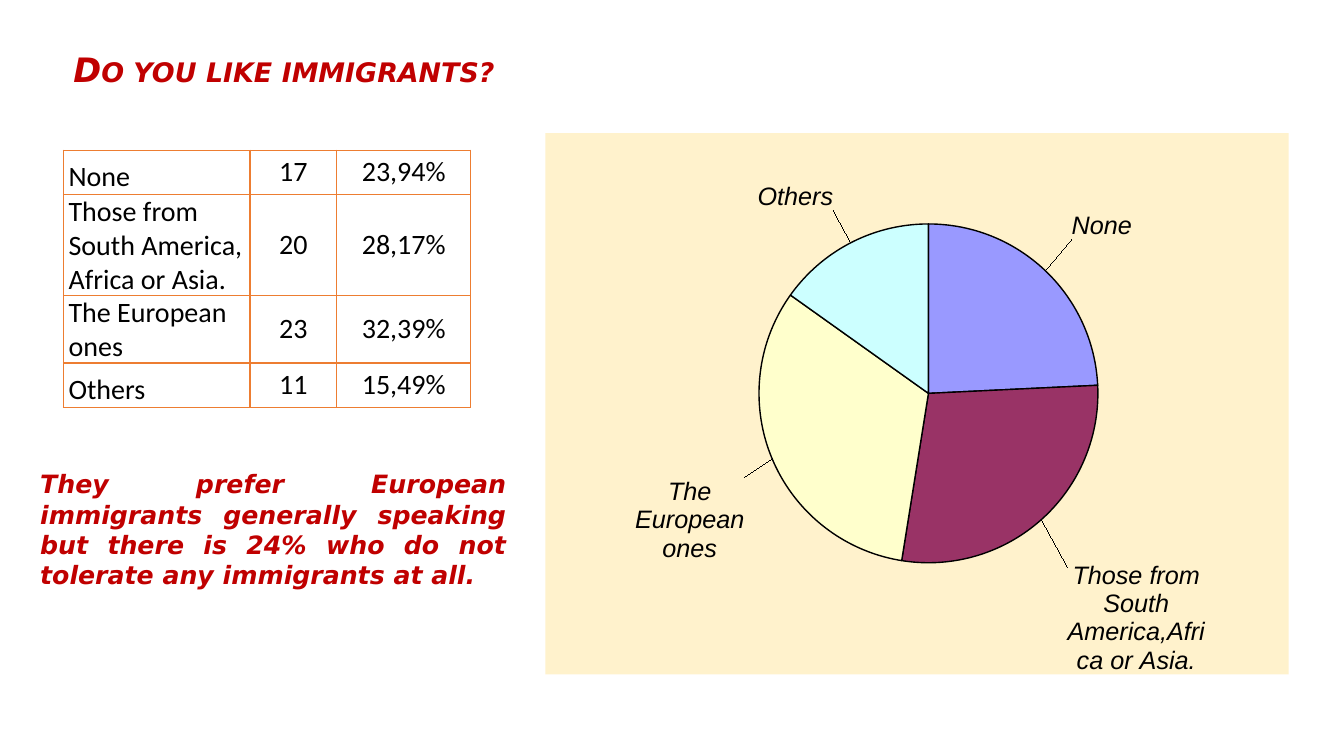
import pptx
import pptx.chart.data
import pptx.dml.color
import pptx.enum.chart
import pptx.enum.text
import pptx.oxml
import pptx.oxml.ns
import pptx.util
from pptx.util import Inches

THEME = {
    "accent": "C00000", "ink": "000000", "border": "ED7D31", "panel": "FFF2CC",
    "heading_font": "DejaVu Sans", "table_font": "Calibri", "chart_font": "Arial",
    "heading_size": 24, "remark_size": 18, "table_size": 20, "label_size": 18,
}
HEADING = "Do you like immigrants?"
REMARK = ("They prefer European immigrants generally speaking but there is 24% "
          "who do not tolerate any immigrants at all.")
ANSWERS = [
    ("None", "17", "23,94%"),
    ("Those from South America, Africa or Asia.", "20", "28,17%"),
    ("The European ones", "23", "32,39%"),
    ("Others", "11", "15,49%"),
]
COLUMN_WIDTHS = (1.85, 0.86, 1.33)
ROW_HEIGHTS = (0.44, 1, 0.67, 0.44)
# category, value, colour, label offset as a fraction of the chart
SLICES = [
    ("None", 24, "9999FF", (0.03, -0.05)),
    ("Those from South America,Africa or Asia.", 28, "993366", (0.03, 0.08)),
    ("The European ones", 32, "FFFFCC", (-0.03, 0.03)),
    ("Others", 15, "CCFFFF", (-0.02, -0.05)),
]
PLOT_AREA = {"x": 0.173, "y": 0.168, "w": 0.685, "h": 0.626}


def rgb(name):
    return pptx.dml.color.RGBColor.from_string(name)


def apply(target, values):
    for name, value in values.items():
        setattr(target, name, value)


def style_font(font, part, face, color, **flags):
    apply(font, {"name": THEME[face], "size": pptx.util.Pt(THEME[part + "_size"]), **flags})
    font.color.rgb = rgb(THEME[color])


def add_text(slide, box, text, part, align):
    frame = slide.shapes.add_textbox(*map(Inches, box)).text_frame
    frame.word_wrap = True
    paragraph = frame.paragraphs[0]
    paragraph.alignment = align
    run = paragraph.add_run()
    run.text = text
    style_font(run.font, part, "heading_font", "accent", bold=True, italic=True)
    return paragraph


def border_cell(cell):
    properties = cell._tc.get_or_add_tcPr()
    for position, side in enumerate(("lnL", "lnR", "lnT", "lnB")):
        properties.insert(position, pptx.oxml.parse_xml(
            f'<a:{side} {pptx.oxml.ns.nsdecls("a")} w="12700"><a:solidFill>'
            f'<a:srgbClr val="{THEME["border"]}"/></a:solidFill></a:{side}>'))


def add_answers(slide):
    frame = slide.shapes.add_table(
        len(ANSWERS), len(COLUMN_WIDTHS), Inches(0.63), Inches(1.49),
        Inches(sum(COLUMN_WIDTHS)), Inches(sum(ROW_HEIGHTS)))
    table = frame.table
    apply(table, {"first_row": False, "horz_banding": False})
    for column, width in zip(table.columns, COLUMN_WIDTHS):
        column.width = Inches(width)
    anchors = pptx.enum.text.MSO_ANCHOR
    for r, answer in enumerate(ANSWERS):
        table.rows[r].height = Inches(ROW_HEIGHTS[r])
        for c, text in enumerate(answer):
            cell = table.cell(r, c)
            apply(cell, {
                "text": text, "margin_left": Inches(0.05), "margin_right": Inches(0.05),
                "margin_top": 0, "margin_bottom": 0,
                "vertical_anchor": anchors.MIDDLE if c else anchors.BOTTOM})
            cell.fill.background()
            border_cell(cell)
            paragraph = cell.text_frame.paragraphs[0]
            if c:
                paragraph.alignment = pptx.enum.text.PP_ALIGN.CENTER
            style_font(paragraph.runs[0].font, "table", "table_font", "ink")


def manual_layout(values, target=""):
    modes = "".join(f'<c:{axis}Mode val="edge"/>' for axis in "xy") if target else ""
    sizes = "".join(f'<c:{name} val="{value}"/>' for name, value in values.items())
    return pptx.oxml.parse_xml(
        f'<c:layout {pptx.oxml.ns.nsdecls("c")}><c:manualLayout>'
        f'{target}{modes}{sizes}</c:manualLayout></c:layout>')


def show_category(labels_xml):
    for tag, value in (("showVal", "0"), ("showCatName", "1"),
                       ("showPercent", "0"), ("showLeaderLines", "1")):
        for element in labels_xml.findall(pptx.oxml.ns.qn("c:" + tag)):
            element.set("val", value)


def add_pie(slide):
    data = pptx.chart.data.CategoryChartData()
    data.categories = [part[0] for part in SLICES]
    data.add_series("Series 1", [part[1] for part in SLICES])
    chart = slide.shapes.add_chart(
        pptx.enum.chart.XL_CHART_TYPE.PIE, Inches(5.41), Inches(1.32),
        Inches(7.37), Inches(5.37), data).chart
    apply(chart, {"has_legend": False, "has_title": False})
    style_font(chart.font, "label", "chart_font", "ink", italic=True)

    panel = pptx.oxml.parse_xml(
        f'<c:spPr {pptx.oxml.ns.nsdecls("c", "a")}><a:solidFill>'
        f'<a:srgbClr val="{THEME["panel"]}"/></a:solidFill><a:ln><a:noFill/></a:ln></c:spPr>')
    chart._chartSpace.chart.addnext(panel)
    plot_area = chart._chartSpace.chart.plotArea
    for layout in plot_area.findall(pptx.oxml.ns.qn("c:layout")):
        plot_area.remove(layout)
    plot_area.insert(0, manual_layout(PLOT_AREA, '<c:layoutTarget val="inner"/>'))

    plot = chart.plots[0]
    plot.vary_by_categories = True
    series = plot.series[0]
    outside = pptx.enum.chart.XL_LABEL_POSITION.OUTSIDE_END
    series.data_labels.position = outside
    style_font(series.data_labels.font, "label", "chart_font", "ink", italic=True)
    for index, (_, _, color, offset) in enumerate(SLICES):
        point = series.points[index]
        point.format.fill.solid()
        point.format.fill.fore_color.rgb = rgb(color)
        point.format.line.color.rgb = rgb(THEME["ink"])
        point.format.line.width = pptx.util.Pt(1)
        style_font(point.data_label.font, "label", "chart_font", "ink", italic=True)
        point.data_label.position = outside
        label_xml = series.data_labels._element.findall(pptx.oxml.ns.qn("c:dLbl"))[index]
        label_xml.insert(1, manual_layout(dict(zip("xy", offset))))
        show_category(label_xml)
    show_category(series.data_labels._element)


def main():
    deck = pptx.Presentation()
    apply(deck, {"slide_width": Inches(13.33), "slide_height": Inches(7.5)})
    slide = deck.slides.add_slide(deck.slide_layouts[6])
    align = pptx.enum.text.PP_ALIGN
    heading = add_text(slide, (0.63, 0.48, 5.74, 0.5), HEADING, "heading", align.LEFT)
    heading.line_spacing = 0.9
    heading.runs[0].font._element.set("cap", "small")
    add_text(slide, (0.3, 4.6, 4.82, 1.31), REMARK, "remark", align.JUSTIFY)
    add_answers(slide)
    add_pie(slide)
    deck.save("out.pptx")


if __name__ == "__main__":
    main()
